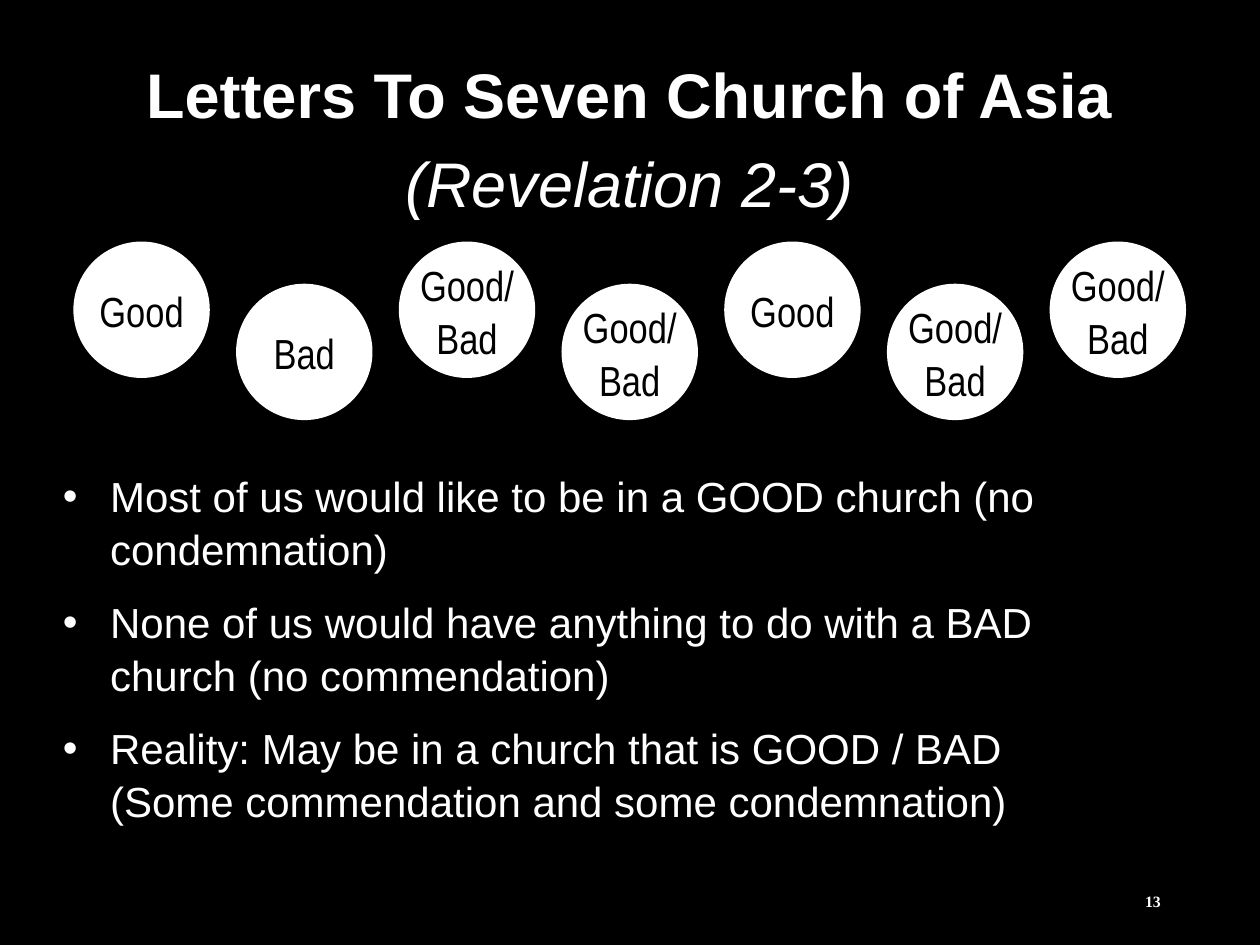
from pptx import Presentation
from pptx.dml.color import RGBColor
from pptx.enum.shapes import MSO_SHAPE
from pptx.enum.text import MSO_ANCHOR, PP_ALIGN
from pptx.oxml.ns import qn
from pptx.util import Cm, Pt
from lxml import etree

OVAL = MSO_SHAPE.OVAL
TOP, MIDDLE = MSO_ANCHOR.TOP, MSO_ANCHOR.MIDDLE
LEFT, CENTER, RIGHT = PP_ALIGN.LEFT, PP_ALIGN.CENTER, PP_ALIGN.RIGHT

BLACK, WHITE = "000000", "FFFFFF"
LINE_SPACING = 1.05

CHURCHES = ["Good", "Bad", "Good/\nBad", "Good/\nBad", "Good", "Good/\nBad", "Good/\nBad"]
POINTS = [
    "Most of us would like to be in a GOOD church (no condemnation)",
    "None of us would have anything to do with a BAD church (no commendation)",
    "Reality: May be in a church that is GOOD / BAD\v(Some commendation and some condemnation)",
]


def color(hex_string):
    return RGBColor.from_string(hex_string)


def add_bullet(paragraph):
    properties = paragraph._p.get_or_add_pPr()
    properties.set("marL", str(Cm(0.95)))
    properties.set("indent", str(-Cm(0.95)))
    bullet_color = etree.SubElement(properties, qn("a:buClr"))
    etree.SubElement(bullet_color, qn("a:srgbClr")).set("val", WHITE)
    etree.SubElement(properties, qn("a:buFont")).set("typeface", "Arial")
    etree.SubElement(properties, qn("a:buChar")).set("char", "•")


def write_lines(frame, lines, font_name, size, font_color, alignment, gap=0, bulleted=False):
    """Write one paragraph per line, with the gap between paragraphs in points."""
    for index, line in enumerate(lines):
        paragraph = frame.add_paragraph() if index else frame.paragraphs[0]
        paragraph.text = line
        paragraph.alignment = alignment
        paragraph.line_spacing = LINE_SPACING
        paragraph.space_before = Pt(gap if index else 0)
        if bulleted:
            add_bullet(paragraph)
        paragraph.font.name = font_name
        paragraph.font.size = Pt(size)
        paragraph.font.color.rgb = color(font_color)


def add_text_frame(slide, left, top, width, height, anchor=TOP):
    text_box = slide.shapes.add_textbox(Cm(left), Cm(top), Cm(width), Cm(height))
    frame = text_box.text_frame
    frame.word_wrap = True
    frame.vertical_anchor = anchor
    return frame


def add_church(slide, left, top, label):
    diameter = Cm(2.75)
    circle = slide.shapes.add_shape(OVAL, Cm(left), Cm(top), diameter, diameter)
    circle.shadow.inherit = False
    circle.fill.solid()
    circle.fill.fore_color.rgb = color(WHITE)
    circle.line.fill.background()
    frame = circle.text_frame
    frame.word_wrap = False
    frame.vertical_anchor = MIDDLE
    write_lines(frame, label.split("\n"), "Arial Narrow", 24, BLACK, CENTER)


def main():
    presentation = Presentation()
    presentation.slide_width, presentation.slide_height = Cm(25.4), Cm(19.05)
    slide = presentation.slides.add_slide(presentation.slide_layouts[6])
    slide.background.fill.solid()
    slide.background.fill.fore_color.rgb = color(BLACK)

    # Title and scripture reference
    title = add_text_frame(slide, 1.47, 0.91, 22.43, 3.56)
    write_lines(title, ["Letters To Seven Church of Asia", "(Revelation 2-3)"],
                "Arial", 36, WHITE, CENTER, gap=6)
    heading, reference = title.paragraphs
    heading.font.bold = True
    reference.font.italic = True

    # Seven churches, alternating between two heights
    for index, label in enumerate(CHURCHES):
        add_church(slide, 1.48 + 3.28 * index, 5.72 if index % 2 else 4.87, label)

    # Conclusions
    points = add_text_frame(slide, 1.02, 9.32, 22.23, 7.44)
    write_lines(points, POINTS, "Arial", 24, WHITE, LEFT, gap=11.5, bulleted=True)

    # Slide number
    number = add_text_frame(slide, 17.93, 17.65, 5.72, 1.02, MIDDLE)
    write_lines(number, ["13"], "Times New Roman", 9, WHITE, RIGHT)
    number.paragraphs[0].font.bold = True

    presentation.save("out.pptx")


if __name__ == "__main__":
    main()
